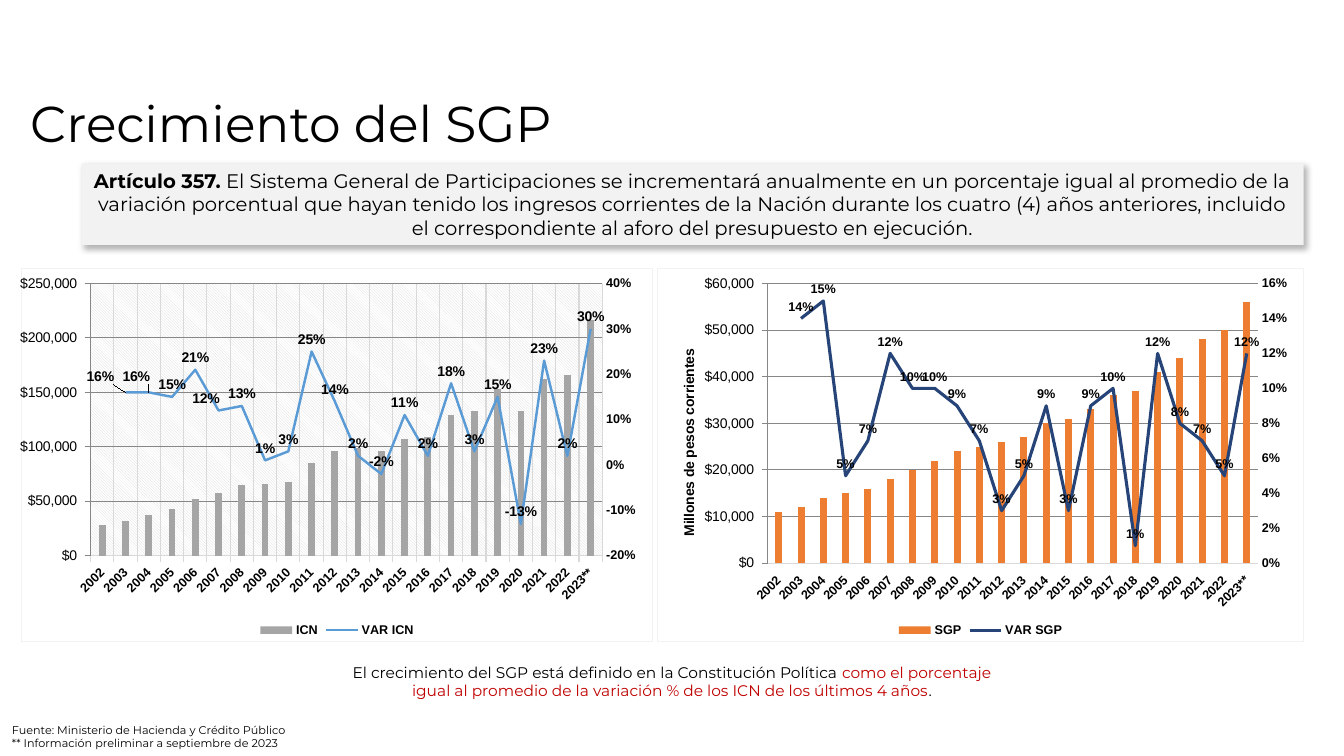
from pptx import Presentation
from pptx.chart.axis import ValueAxis
from pptx.chart.data import CategoryChartData
from pptx.dml.color import RGBColor
from pptx.enum.chart import (XL_CHART_TYPE, XL_LABEL_POSITION, XL_LEGEND_POSITION,
                             XL_MARKER_STYLE, XL_TICK_LABEL_POSITION, XL_TICK_MARK)
from pptx.enum.shapes import MSO_SHAPE
from pptx.enum.text import MSO_ANCHOR, MSO_AUTO_SIZE, PP_ALIGN
from pptx.oxml import parse_xml
from pptx.oxml.ns import nsdecls, qn
from pptx.util import Inches, Pt

NS = nsdecls("c", "a")
YEARS = [str(year) for year in range(2002, 2023)] + ["2023**"]
MONEY = '"$"#,##0_);\\("$"#,##0\\)'
GRID = "D9D9D9"
ICN = [28, 32, 37, 43, 52, 58, 65, 66, 68, 85, 96,
       99, 96, 107, 109, 129, 133, 153, 133, 162, 166, 216]
VAR_ICN = [None, 16, 16, 15, 21, 12, 13, 1, 3, 25, 14,
           2, -2, 11, 2, 18, 3, 15, -13, 23, 2, 30]
SGP = [11, 12, 14, 15, 16, 18, 20, 22, 24, 25, 26,
       27, 30, 31, 33, 36, 37, 41, 44, 48, 50, 56]
VAR_SGP = [None, 14, 15, 5, 7, 12, 10, 10, 9, 7, 3,
           5, 9, 3, 9, 10, 1, 12, 8, 7, 5, 12]


def rgb(color):
    return RGBColor.from_string(color)


def set_font(font, size, color="000000", bold=True, name="Arial"):
    font.size, font.bold, font.name = Pt(size), bold, name
    font.color.rgb = rgb(color)


def add_runs(p, runs, size):
    for text, color, bold in runs:
        r = p.add_run()
        r.text = text
        set_font(r.font, size, color, bold, "Montserrat")


def add_title(s, text):
    sp = s.shapes.title
    sp.left, sp.top, sp.width, sp.height = map(Inches, (0.2, 0.95, 8.01, 0.61))
    tf = sp.text_frame
    tf.auto_size = MSO_AUTO_SIZE.NONE
    tf.vertical_anchor = MSO_ANCHOR.MIDDLE
    p = tf.paragraphs[0]
    p.alignment, p.line_spacing = PP_ALIGN.LEFT, 0.9
    add_runs(p, [(text, "000000", False)], 36)


def add_box(s, kind, at, paragraphs, size, align, fill=None):
    sp = s.shapes.add_shape(kind, *map(Inches, at))
    sp.shadow.inherit = False
    sp.line.fill.background()
    if fill:
        sp.fill.solid()
        sp.fill.fore_color.rgb = rgb(fill)
    else:
        sp.fill.background()
    tf = sp.text_frame
    tf.word_wrap = True
    tf.vertical_anchor = MSO_ANCHOR.MIDDLE
    for i, runs in enumerate(paragraphs):
        p = tf.add_paragraph() if i else tf.paragraphs[0]
        p.alignment = align
        add_runs(p, runs, size)
    return sp


def add_shadow(sp):
    effects = sp._element.spPr.find(qn("a:effectLst"))
    effects.append(parse_xml(
        f'<a:outerShdw {NS} blurRad="57150" dist="33020" dir="3180000" algn="tl" rotWithShape="0">'
        '<a:srgbClr val="000000"><a:alpha val="30000"/></a:srgbClr></a:outerShdw>'))


def set_layout(parent, index, **values):
    for old in parent.findall(qn("c:layout")):
        parent.remove(old)
    modes = {"xMode": "edge", "yMode": "edge"} if parent.tag != qn("c:dLbl") else {}
    if "w" in values:
        modes = {"layoutTarget": "inner", **modes}
    inner = "".join(f'<c:{k} val="{v}"/>' for k, v in {**modes, **values}.items())
    parent.insert(index, parse_xml(
        f"<c:layout {NS}><c:manualLayout>{inner}</c:manualLayout></c:layout>"))


def style_value_axis(axis, low, high, step, number_format):
    axis.minimum_scale, axis.maximum_scale, axis.major_unit = low, high, step
    axis.major_tick_mark = axis.minor_tick_mark = XL_TICK_MARK.NONE
    axis.format.line.fill.background()
    axis.tick_labels.number_format = number_format
    axis.tick_labels.number_format_is_linked = False
    set_font(axis.tick_labels.font, 9)


def style_grid(axis):
    axis.has_major_gridlines = True
    line = axis.major_gridlines.format.line
    line.color.rgb, line.width = rgb(GRID), Pt(0.75)


def style_category_axis(axis, tick):
    axis.major_tick_mark, axis.minor_tick_mark = tick, XL_TICK_MARK.NONE
    axis.tick_label_position = XL_TICK_LABEL_POSITION.LOW
    axis.format.line.color.rgb, axis.format.line.width = rgb(GRID), Pt(0.75)
    set_font(axis.tick_labels.font, 9)
    axis._element.find(qn("c:txPr")).find(qn("a:bodyPr")).set("rot", "-2700000")


def move_to_right_axis(chart):
    area = chart._chartSpace.chart.plotArea
    bars = area.find(qn("c:barChart"))
    ser = bars.findall(qn("c:ser"))[1]
    for flag in ser.findall(qn("c:invertIfNegative")):
        ser.remove(flag)
    lines = parse_xml(
        f'<c:lineChart {NS}><c:grouping val="standard"/><c:varyColors val="0"/>'
        '<c:marker val="1"/><c:axId val="50010"/><c:axId val="50020"/></c:lineChart>')
    lines.insert(2, ser)
    bars.addnext(lines)
    category = parse_xml(
        f'<c:catAx {NS}><c:axId val="50010"/><c:scaling><c:orientation val="minMax"/></c:scaling>'
        '<c:delete val="1"/><c:axPos val="b"/><c:crossAx val="50020"/></c:catAx>')
    value = parse_xml(
        f'<c:valAx {NS}><c:axId val="50020"/><c:scaling><c:orientation val="minMax"/></c:scaling>'
        '<c:delete val="0"/><c:axPos val="r"/><c:tickLblPos val="nextTo"/>'
        '<c:crossAx val="50010"/><c:crosses val="max"/></c:valAx>')
    area.findall(qn("c:valAx"))[-1].addnext(value)
    value.addnext(category)
    return ValueAxis(value)


def style_line(series, color, width, label_size):
    series.smooth = False
    series.marker.style = XL_MARKER_STYLE.NONE
    series.format.line.color.rgb, series.format.line.width = rgb(color), Pt(width)
    labels = series.data_labels
    labels.show_value = True
    labels.number_format, labels.number_format_is_linked = "0%", False
    labels.position = XL_LABEL_POSITION.ABOVE
    set_font(labels.font, label_size)


def shift_label(series, index, dx, dy):
    label = series.points[index].data_label
    set_font(label.font, 10)
    label.position = XL_LABEL_POSITION.ABOVE
    dLbl = label._dLbl
    set_layout(dLbl, 1, x=dx, y=dy)
    dLbl.insert(2, parse_xml(f'<c:numFmt {NS} formatCode="0%" sourceLinked="0"/>'))


def add_combo(s, at, names, amounts, rates, colors, left, right, plot, gap, width, label_size,
              tick=XL_TICK_MARK.NONE):
    data = CategoryChartData()
    data.categories = YEARS
    data.add_series(names[0], [v * 1000 for v in amounts], MONEY)
    data.add_series(names[1], [None if v is None else v / 100 for v in rates], "0%")
    chart = s.shapes.add_chart(XL_CHART_TYPE.COLUMN_CLUSTERED, *map(Inches, at), data).chart
    chart.has_title = False
    set_font(chart.font, 10, bold=False)
    chart._chartSpace.chart.addnext(parse_xml(
        f'<c:spPr {NS}><a:noFill/><a:ln w="9525"><a:solidFill><a:srgbClr val="F2F2F2"/>'
        '</a:solidFill></a:ln></c:spPr>'))
    right_axis = move_to_right_axis(chart)
    style_value_axis(chart.value_axis, *left, MONEY)
    style_value_axis(right_axis, *right, "0%")
    style_grid(chart.value_axis)
    style_category_axis(chart.category_axis, tick)
    bars, lines = chart.plots
    bars.gap_width, bars.overlap, bars.vary_by_categories = gap, -27, False
    bars.series[0].format.fill.solid()
    bars.series[0].format.fill.fore_color.rgb = rgb(colors[0])
    style_line(lines.series[0], colors[1], width, label_size)
    chart.has_legend = True
    chart.legend.position = XL_LEGEND_POSITION.BOTTOM
    chart.legend.include_in_layout = False
    set_font(chart.legend.font, 9)
    set_layout(chart._chartSpace.chart.plotArea, 0, **plot)
    return chart


def main():
    prs = Presentation()
    prs.slide_width, prs.slide_height = Inches(13.33), Inches(7.5)
    s = prs.slides.add_slide(prs.slide_layouts[5])
    add_title(s, "Crecimiento del SGP")
    article = add_box(s, MSO_SHAPE.RECTANGLE, (0.81, 1.62, 12.12, 0.81), [[
        ("Artículo 357.", "000000", True),
        (" El Sistema General de Participaciones se incrementará anualmente en un porcentaje igual "
         "al promedio de la variación porcentual que hayan tenido los ingresos corrientes de la "
         "Nación durante los cuatro (4) años anteriores, incluido el correspondiente al aforo del "
         "presupuesto en ejecución.", "000000", False)]], 14, PP_ALIGN.CENTER, "F2F2F2")
    add_shadow(article)
    add_box(s, MSO_SHAPE.ROUNDED_RECTANGLE, (3.27, 6.5, 6.79, 0.52), [[
        ("El crecimiento del SGP está definido en la Constitución Política ", "000000", False),
        ("como el porcentaje igual al promedio de la variación % de los ICN de los últimos 4 años",
         "C00000", False),
        (".", "000000", False)]], 11, PP_ALIGN.CENTER, "FFFFFF")
    add_box(s, MSO_SHAPE.ROUNDED_RECTANGLE, (0, 7.1, 7.53, 0.41), [
        [("Fuente: Ministerio de Hacienda y Crédito Público", "000000", False)],
        [("** Información preliminar a septiembre de 2023", "000000", False)]], 8, PP_ALIGN.LEFT)

    icn = add_combo(s, (0.2, 2.66, 6.28, 3.71), ("ICN", "VAR ICN"), ICN, VAR_ICN,
                    ("A5A5A5", "5B9BD5"), (0, 250000, 50000), (-0.2, 0.4, 0.1),
                    dict(x=0.11, y=0.04, w=0.81, h=0.73), 247, 1.75, 10, XL_TICK_MARK.OUTSIDE)
    style_grid(icn.category_axis)
    icn._chartSpace.chart.plotArea.append(parse_xml(
        f'<c:spPr {NS}><a:pattFill prst="ltDnDiag"><a:fgClr><a:srgbClr val="{GRID}"/></a:fgClr>'
        '<a:bgClr><a:srgbClr val="FFFFFF"/></a:bgClr></a:pattFill></c:spPr>'))
    for index, dx, dy in ((1, -0.04, -0.01), (2, -0.02, -0.01), (5, -0.02, 0)):
        shift_label(icn.plots[1].series[0], index, dx, dy)

    sgp = add_combo(s, (6.52, 2.66, 6.41, 3.71), ("SGP", "VAR SGP"), SGP, VAR_SGP,
                    ("ED7D31", "264478"), (0, 60000, 10000), (0, 0.16, 0.02),
                    dict(x=0.17, y=0.04, w=0.76, h=0.75), 219, 2.25, 9)
    title = sgp.value_axis.axis_title
    p = title.text_frame.paragraphs[0]
    r = p.add_run()
    r.text = "Millones de pesos corrientes"
    set_font(r.font, 10)
    title.text_frame._txBody.find(qn("a:bodyPr")).set("rot", "-5400000")
    set_layout(title._element, 1, x=0.03, y=0.21)
    prs.save("out.pptx")


if __name__ == "__main__":
    main()
